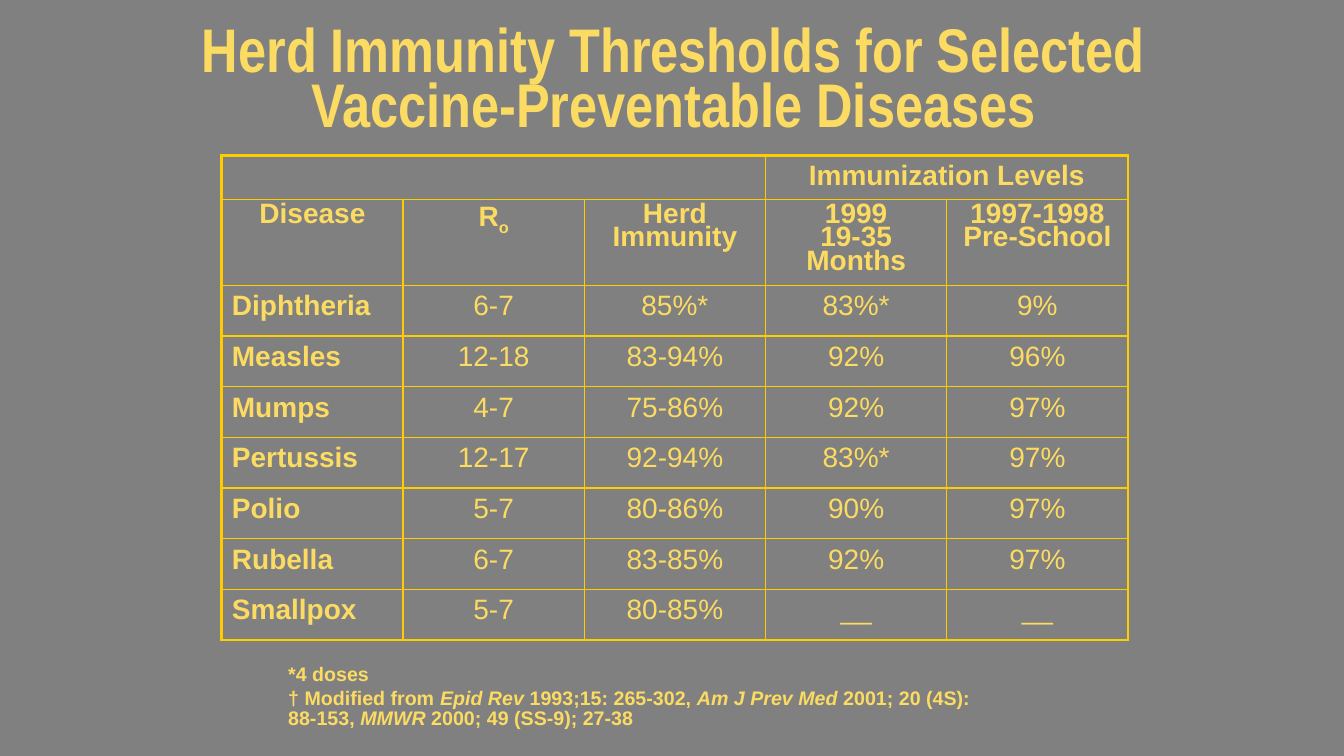
"""Build the herd immunity thresholds slide."""
from dataclasses import dataclass

import pptx
import pptx.dml.color
import pptx.enum.text
import pptx.oxml
import pptx.oxml.ns
import pptx.util
from pptx.util import Inches

GOLD = "FCDB62"
EDGE = "FFCC00"
THIN, THICK = 1, 2.25
ALIGN = pptx.enum.text.PP_ALIGN
HEADS = ["Disease", "Ro", "Herd Immunity", "1999\n19-35 Months", "1997-1998\nPre-School"]


@dataclass
class Row:
    name: str
    rate: str
    herd: str
    infant: str
    school: str

    def texts(self) -> list[str]:
        return [self.name, self.rate, self.herd, self.infant, self.school]


@dataclass
class Box:
    left: float
    top: float
    width: float
    height: float

    def place(self) -> list[int]:
        return [Inches(n) for n in (self.left, self.top, self.width, self.height)]


@dataclass
class Part:
    text: str
    slant: bool = False


ROWS = [
    Row("Diphtheria", "6-7", "85%*", "83%*", "9%"),
    Row("Measles", "12-18", "83-94%", "92%", "96%"),
    Row("Mumps", "4-7", "75-86%", "92%", "97%"),
    Row("Pertussis", "12-17", "92-94%", "83%*", "97%"),
    Row("Polio", "5-7", "80-86%", "90%", "97%"),
    Row("Rubella", "6-7", "83-85%", "92%", "97%"),
    Row("Smallpox", "5-7", "80-85%", "__", "__"),
]
NOTES = [
    [Part("*4 doses")],
    [
        Part("† Modified from "),
        Part("Epid Rev", True),
        Part(" 1993;15: 265-302, "),
        Part("Am J Prev Med", True),
        Part(" 2001; 20 (4S): 88-153, "),
        Part("MMWR", True),
        Part(" 2000; 49 (SS-9); 27-38"),
    ],
]


def color(code: str) -> pptx.dml.color.RGBColor:
    return pptx.dml.color.RGBColor.from_string(code)


def style(para, size: float, bold: bool = True, face: str = "Arial") -> None:
    para.font.size = pptx.util.Pt(size)
    para.font.bold = bold
    para.font.name = face
    para.font.color.rgb = color(GOLD)


def border(cell, side: str, width: float) -> None:
    line = pptx.oxml.parse_xml(
        f'<a:ln{side} {pptx.oxml.ns.nsdecls("a")} w="{pptx.util.Pt(width)}">'
        f'<a:solidFill><a:srgbClr val="{EDGE}"/></a:solidFill></a:ln{side}>'
    )
    cell._tc.get_or_add_tcPr().append(line)


def write(cell, text: str, bold: bool, align: ALIGN, space: float) -> None:
    cell.text = text
    for para in cell.text_frame.paragraphs:
        style(para, 20, bold)
        para.alignment = align
        para.line_spacing = space


def add_title(slide) -> None:
    frame = slide.shapes.add_textbox(*Box(1.71, 0.2, 9.95, 1.25).place()).text_frame
    frame.word_wrap = True
    frame.vertical_anchor = pptx.enum.text.MSO_ANCHOR.MIDDLE
    para = frame.paragraphs[0]
    para.text = "Herd Immunity Thresholds for Selected Vaccine-Preventable Diseases"
    para.alignment = ALIGN.CENTER
    para.line_spacing = 0.75
    style(para, 44, face="Arial Narrow")


def add_grid(slide) -> None:
    tall = [0.44, 0.85] + [0.503] * len(ROWS)
    wide = len(HEADS)
    box = Box(2.2, 1.54, 8.99, 4.82)
    grid = slide.shapes.add_table(len(tall), wide, *box.place()).table
    grid.first_row = grid.horz_banding = False
    for row, height in zip(grid.rows, tall):
        row.height = Inches(height)
    for r in range(len(tall)):
        for c in range(wide):
            cell = grid.cell(r, c)
            edges = {"L": c == 0, "R": c == wide - 1, "T": r == 0, "B": r == len(tall) - 1}
            for side, outer in edges.items():
                border(cell, side, THICK if outer else THIN)
            cell.fill.background()
    grid.cell(0, 0).merge(grid.cell(0, 2))
    grid.cell(0, 3).merge(grid.cell(0, 4))
    write(grid.cell(0, 3), "Immunization Levels", True, ALIGN.CENTER, 1.0)
    for c, head in enumerate(HEADS):
        write(grid.cell(1, c), head, True, ALIGN.CENTER, 0.75)
    para = grid.cell(1, 1).text_frame.paragraphs[0]
    para.runs[0].text = "R"
    low = para.add_run()
    low.text = "o"
    low._r.get_or_add_rPr().set("baseline", "-25000")
    for r, row in enumerate(ROWS, 2):
        for c, text in enumerate(row.texts()):
            align = ALIGN.CENTER if c else ALIGN.LEFT
            write(grid.cell(r, c), text, c == 0, align, 1.0)


def add_notes(slide) -> None:
    frame = slide.shapes.add_textbox(*Box(2.76, 6.55, 7.08, 0.75).place()).text_frame
    frame.word_wrap = True
    frame.auto_size = pptx.enum.text.MSO_AUTO_SIZE.SHAPE_TO_FIT_TEXT
    for i, parts in enumerate(NOTES):
        para = frame.add_paragraph() if i else frame.paragraphs[0]
        para.line_spacing = 0.85
        para.space_before = pptx.util.Pt(2.8 if i else 0)
        style(para, 14)
        for part in parts:
            run = para.add_run()
            run.text = part.text
            if part.slant:
                run.font.italic = True


def main() -> None:
    deck = pptx.Presentation()
    deck.slide_width, deck.slide_height = Inches(13.33), Inches(7.5)
    slide = deck.slides.add_slide(deck.slide_layouts[6])
    slide.background.fill.solid()
    slide.background.fill.fore_color.rgb = color("808080")
    add_title(slide)
    add_grid(slide)
    add_notes(slide)
    deck.save("out.pptx")


if __name__ == "__main__":
    main()
